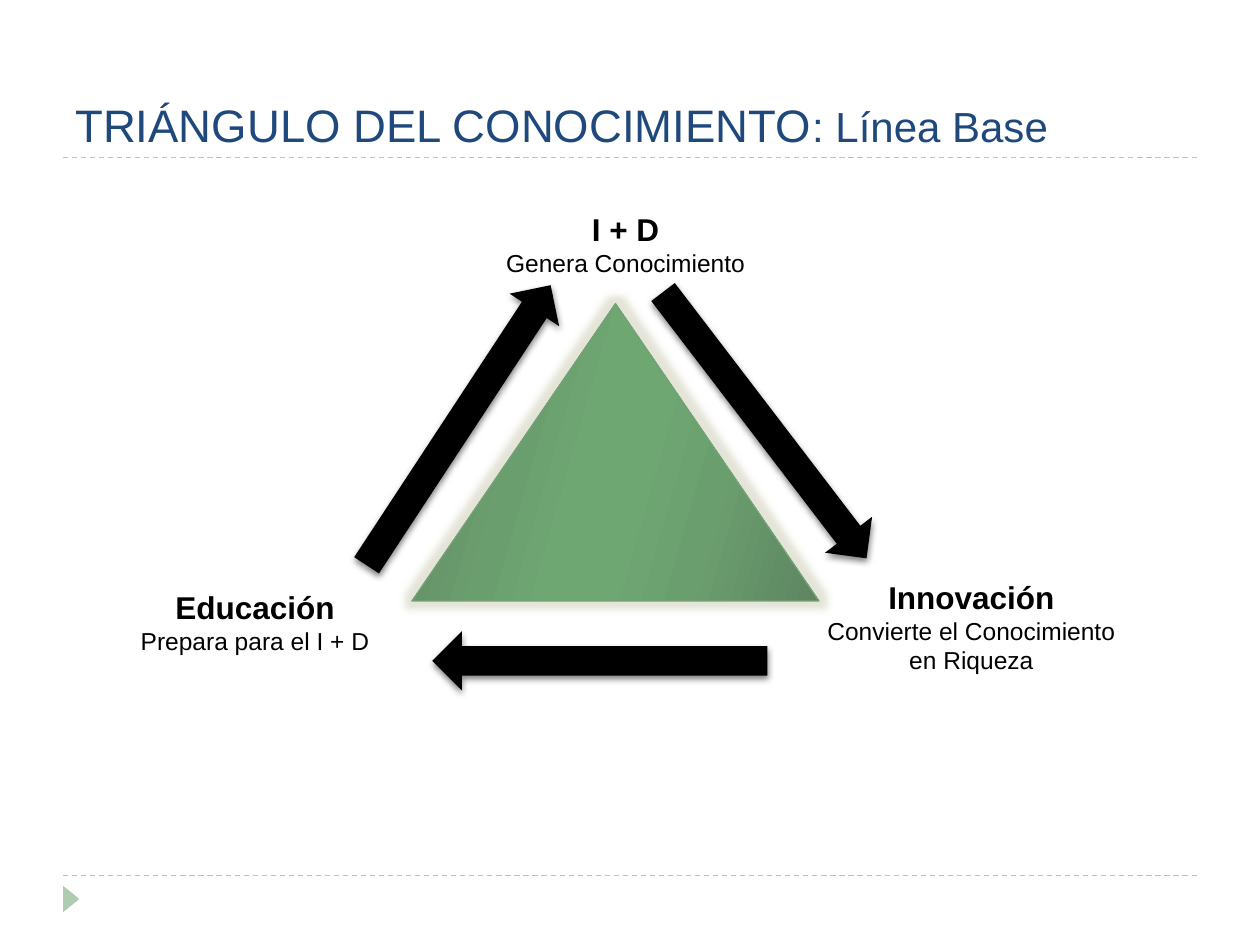
from dataclasses import dataclass

from pptx import Presentation
from pptx.dml.color import RGBColor
from pptx.enum.dml import MSO_LINE
from pptx.enum.shapes import MSO_CONNECTOR, MSO_SHAPE
from pptx.enum.text import MSO_ANCHOR, MSO_AUTO_SIZE, PP_ALIGN
from pptx.oxml import parse_xml
from pptx.oxml.ns import nsdecls
from pptx.util import Inches, Pt

FONT = "Arial"
BLACK = RGBColor(0x00, 0x00, 0x00)
NAVY = RGBColor(0x1F, 0x49, 0x7D)
SAGE = RGBColor(0xB0, 0xCC, 0xB0)
GREEN = RGBColor(0x72, 0xA3, 0x76)
GLOW = RGBColor(0xD4, 0xD2, 0xBE)
GREEN_DARK = RGBColor(0x5D, 0x85, 0x61)
GREEN_MID = RGBColor(0x6B, 0x9E, 0x6F)
GREEN_LIGHT = RGBColor(0x6E, 0xA7, 0x72)
GRADIENT = [(0, GREEN_DARK), (30, GREEN_MID), (45, GREEN_LIGHT),
            (55, GREEN_LIGHT), (73, GREEN_MID), (100, GREEN_DARK)]
GRADIENT_ANGLE = 16
ARROW_SIZE = (2.66, 0.47)


@dataclass
class Corner:
    """A labelled corner of the triangle."""
    left: float
    top: float
    width: float
    height: float
    heading: str
    details: list[str]


@dataclass
class Arrow:
    """A block arrow along one side of the triangle."""
    left: float
    top: float
    rotation: float


CORNERS = [
    Corner(3.91, 1.62, 2.11, 0.64, "I + D", ["Genera Conocimiento"]),
    Corner(1.01, 4.62, 2.03, 0.64, "Educación", ["Prepara para el I + D"]),
    Corner(6.46, 4.54, 2.5, 0.88, "Innovación",
           ["Convierte el Conocimiento", "en Riqueza"]),
]
ARROWS = [Arrow(2.31, 3.14, 303.3), Arrow(4.74, 3.14, 52.6), Arrow(3.43, 5.01, 180)]


def add_effect(sp, xml: str) -> None:
    """Replace the theme effects of a shape with one effect."""
    sp.shadow.inherit = False
    sp._element.spPr.find("{*}effectLst").append(parse_xml(xml))


def add_solid(slide, kind: MSO_SHAPE, box: tuple, color: RGBColor, rotation: float):
    """Add a rotated shape with a plain fill and no outline."""
    sp = slide.shapes.add_shape(kind, *map(Inches, box))
    sp.rotation = rotation
    sp.fill.solid()
    sp.fill.fore_color.rgb = color
    sp.line.fill.background()
    sp.shadow.inherit = False
    return sp


def add_rule(slide, y: float) -> None:
    """Add a dashed rule across the slide."""
    line = slide.shapes.add_connector(
        MSO_CONNECTOR.STRAIGHT, Inches(0.5), Inches(y), Inches(9.5), Inches(y))
    line.line.color.rgb = SAGE
    line.line.width = Pt(0.75)
    line.line.dash_style = MSO_LINE.DASH
    line._element.spPr.append(parse_xml(f"<a:effectLst {nsdecls('a')}/>"))


def add_title(slide) -> None:
    """Add the two-size title."""
    tf = slide.shapes.add_textbox(
        Inches(0.5), Inches(0.17), Inches(8.2), Inches(1.08)).text_frame
    tf.word_wrap = True
    tf.vertical_anchor = MSO_ANCHOR.BOTTOM
    p = tf.paragraphs[0]
    p.font.name = FONT
    p.font.color.rgb = NAVY
    for text, size in [("TRIÁNGULO DEL CONOCIMIENTO", 26), (": Línea Base", 24)]:
        r = p.add_run()
        r.text = text
        r.font.size = Pt(size)


def add_triangle(slide) -> None:
    """Add the glowing gradient triangle."""
    sp = slide.shapes.add_shape(
        MSO_SHAPE.ISOSCELES_TRIANGLE, Inches(3.27), Inches(2.41), Inches(3.23), Inches(2.36))
    stops = "".join(f'<a:gs pos="{pos * 1000}"><a:srgbClr val="{color}"/></a:gs>'
                    for pos, color in GRADIENT)
    sp._element.spPr.find("{*}prstGeom").addnext(parse_xml(
        f'<a:gradFill {nsdecls("a")} rotWithShape="1"><a:gsLst>{stops}</a:gsLst>'
        f'<a:lin ang="{GRADIENT_ANGLE * 60000}" scaled="0"/></a:gradFill>'))
    sp.line.color.rgb = GREEN
    sp.line.width = Pt(0.75)
    add_effect(sp, f'<a:glow {nsdecls("a")} rad="{Pt(8)}"><a:srgbClr val="{GLOW}">'
                   '<a:alpha val="60000"/></a:srgbClr></a:glow>')


def add_corner(slide, corner: Corner) -> None:
    """Add a bold heading with its detail lines."""
    tf = slide.shapes.add_textbox(
        Inches(corner.left), Inches(corner.top),
        Inches(corner.width), Inches(corner.height)).text_frame
    tf.word_wrap = False
    tf.auto_size = MSO_AUTO_SIZE.SHAPE_TO_FIT_TEXT
    for i, text in enumerate([corner.heading, *corner.details]):
        p = tf.add_paragraph() if i else tf.paragraphs[0]
        p.text = text
        p.alignment = PP_ALIGN.CENTER
        p.font.name = FONT
        p.font.size = Pt(14 if i else 18)
        p.font.bold = i == 0
        p.font.color.rgb = BLACK


def add_arrow(slide, arrow: Arrow) -> None:
    """Add a black arrow with a soft shadow below it."""
    sp = add_solid(slide, MSO_SHAPE.RIGHT_ARROW, (arrow.left, arrow.top, *ARROW_SIZE),
                   BLACK, arrow.rotation)
    add_effect(sp, f'<a:outerShdw {nsdecls("a")} blurRad="{Pt(4)}" dist="{Pt(2)}" '
                   f'dir="5400000" rotWithShape="0"><a:srgbClr val="{BLACK}">'
                   '<a:alpha val="50000"/></a:srgbClr></a:outerShdw>')


def main() -> None:
    """Build the knowledge triangle slide."""
    prs = Presentation()
    prs.slide_width, prs.slide_height = Inches(10), Inches(7.5)
    slide = prs.slides.add_slide(prs.slide_layouts[6])
    for y in (6.95, 1.25):
        add_rule(slide, y)
    add_solid(slide, MSO_SHAPE.ISOSCELES_TRIANGLE, (0.46, 7.07, 0.21, 0.13), SAGE, 90)
    add_title(slide)
    add_triangle(slide)
    for corner in CORNERS:
        add_corner(slide, corner)
    for arrow in ARROWS:
        add_arrow(slide, arrow)
    prs.save("out.pptx")


if __name__ == "__main__":
    main()
